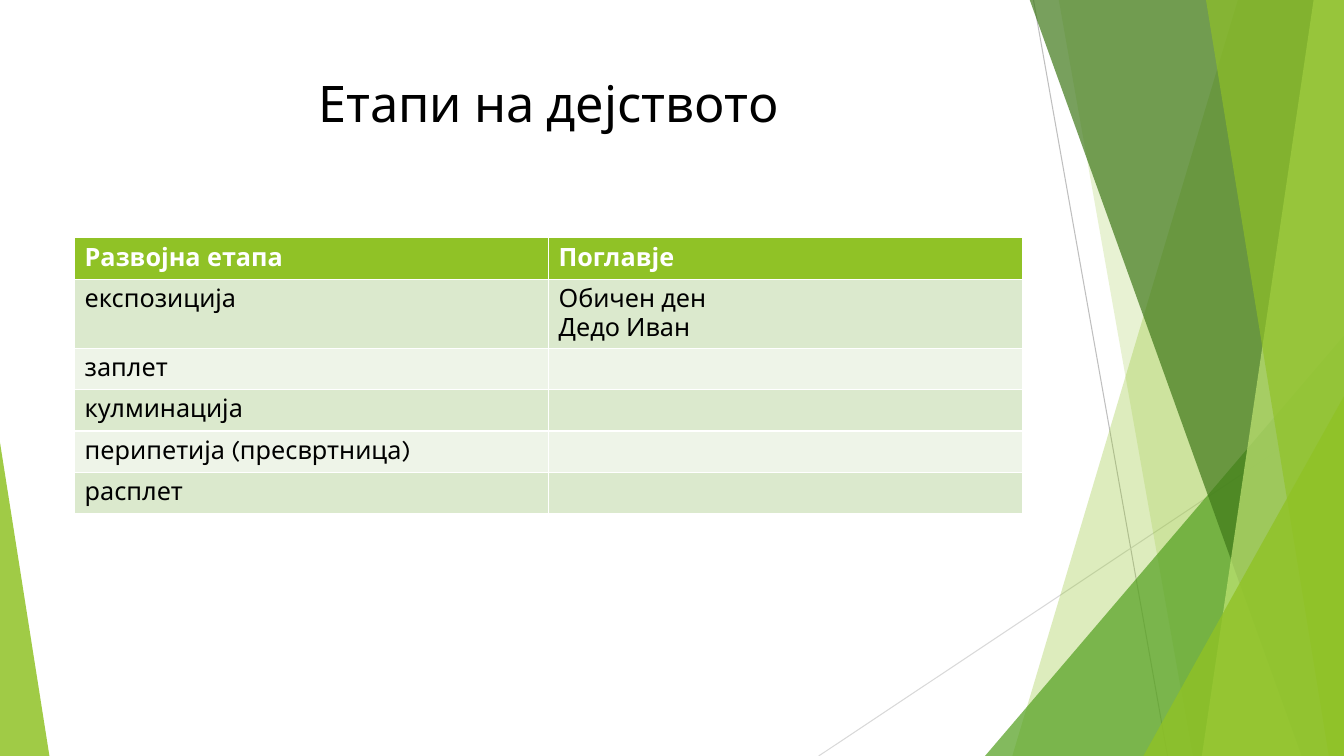
from dataclasses import dataclass

from lxml import etree
from pptx import Presentation
from pptx.dml.color import RGBColor
from pptx.enum import shapes, text
from pptx.oxml.ns import qn
from pptx.util import Inches, Pt


@dataclass(frozen=True)
class Theme:
    font: str = "Karla"
    title_size: int = 36
    table_size: int = 18
    black: str = "000000"
    white: str = "FFFFFF"
    lime: str = "90C226"
    pale_lime: str = "C0E474"
    green: str = "54A021"
    dark_green: str = "3F7819"
    band_dark: str = "DBE9CD"
    band_light: str = "EEF4E8"
    line_dark: str = "BFBFBF"
    line_light: str = "D9D9D9"


theme = Theme()
WIDTH, HEIGHT = 13.33, 7.5


def style_facet(shape, color, opacity):
    """Give a background facet a flat, partly transparent fill."""
    shape.shadow.inherit = False
    shape.line.fill.background()
    shape.fill.solid()
    shape.fill.fore_color.rgb = RGBColor.from_string(color)
    color_element = shape.fill._xPr.find(qn("a:solidFill"))[0]
    etree.SubElement(color_element, qn("a:alpha"), val=str(opacity * 1000))


def style_font(paragraph, size, color, bold=False):
    for run in paragraph.runs:
        run.font.name = theme.font
        run.font.size = Pt(size)
        run.font.bold = bold
        run.font.color.rgb = RGBColor.from_string(color)


presentation = Presentation()
presentation.slide_width = Inches(WIDTH)
presentation.slide_height = Inches(HEIGHT)
slide = presentation.slides.add_slide(presentation.slide_layouts[5])

# Thin background lines
for x1, y1, x2, y2, color in [
    (10.25, 0, 11.58, HEIGHT, theme.line_dark),
    (WIDTH, 4.03, 8.12, HEIGHT, theme.line_light),
]:
    line = slide.shapes.add_connector(
        shapes.MSO_CONNECTOR.STRAIGHT, Inches(x1), Inches(y1), Inches(x2), Inches(y2))
    line.line.color.rgb = RGBColor.from_string(color)
    line.line.width = Pt(0.75)
    etree.SubElement(line._element.spPr, qn("a:effectLst"))

# Facets, back to front: bands run from a top x to a bottom x and fill to the
# right edge; triangles have left, top, width and the position of their apex.
facets = [
    ("band", (12.28, 10.04), theme.lime, 30),
    ("band", (10.5, 11.83), theme.lime, 20),
    ("triangle", (9.77, 3.33, 3.56, 1), theme.green, 72),
    ("band", (10.21, 12.91), theme.dark_green, 70),
    ("band", (13.03, 11.92), theme.pale_lime, 70),
    ("band", (11.96, 13.18), theme.lime, 65),
    ("triangle", (11.34, 3.93, 1.99, 1), theme.lime, 80),
    ("triangle", (0, 4.39, 0.49, 0), theme.lime, 85),
]
for kind, geometry, color, opacity in facets:
    if kind == "band":
        top_x, bottom_x = geometry
        builder = slide.shapes.build_freeform(Inches(top_x), Inches(-0.01))
        corners = [(WIDTH, -0.01), (WIDTH, HEIGHT), (bottom_x, HEIGHT)]
        builder.add_line_segments([(Inches(x), Inches(y)) for x, y in corners])
        facet = builder.convert_to_shape()
    else:
        left, top, width, apex = geometry
        facet = slide.shapes.add_shape(
            shapes.MSO_SHAPE.ISOSCELES_TRIANGLE,
            Inches(left), Inches(top), Inches(width), Inches(HEIGHT - top))
        facet.adjustments[0] = apex
    style_facet(facet, color, opacity)

# Title, brought in front of the facets
title = slide.shapes.title
title._element.getparent().append(title._element)
title.left, title.top = Inches(0.74), Inches(0.67)
title.width, title.height = Inches(9.4), Inches(1.44)
title.text_frame.text = "Етапи на дејството"
title.text_frame.vertical_anchor = text.MSO_ANCHOR.TOP
title.text_frame.paragraphs[0].alignment = text.PP_ALIGN.CENTER
style_font(title.text_frame.paragraphs[0], theme.title_size, theme.black)

# Table of stages
stages = [
    ("Развојна етапа", "Поглавје"),
    ("експозиција", "Обичен ден\nДедо Иван"),
    ("заплет", ""),
    ("кулминација", ""),
    ("перипетија (пресвртница)", ""),
    ("расплет", ""),
]
table = slide.shapes.add_table(
    len(stages), 2, Inches(0.74), Inches(2.36), Inches(9.4), Inches(0.41 * len(stages))).table
for row_index, row in enumerate(stages):
    is_header = row_index == 0
    band = theme.band_dark if row_index % 2 else theme.band_light
    for column_index, content in enumerate(row):
        cell = table.cell(row_index, column_index)
        cell.fill.solid()
        cell.fill.fore_color.rgb = RGBColor.from_string(theme.lime if is_header else band)
        cell.text_frame.text = content
        for paragraph in cell.text_frame.paragraphs:
            style_font(paragraph, theme.table_size,
                       theme.white if is_header else theme.black, bold=is_header)

presentation.save("out.pptx")
